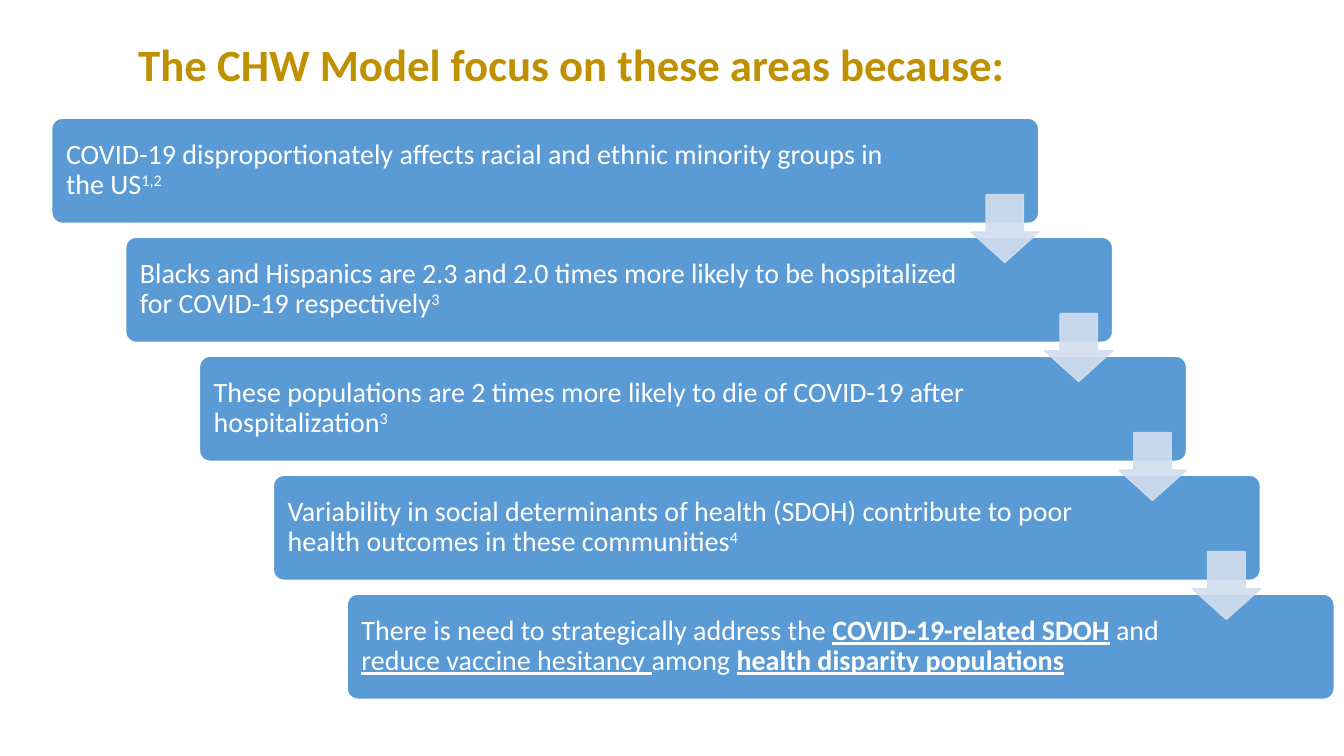
from dataclasses import dataclass

import pptx
import pptx.dml.color
import pptx.enum.shapes
import pptx.enum.text
import pptx.oxml.ns
import pptx.util
from lxml import etree

Pt = pptx.util.Pt
RGB = pptx.dml.color.RGBColor.from_string
SHAPE = pptx.enum.shapes.MSO_SHAPE
ANCHOR = pptx.enum.text.MSO_ANCHOR
LEFT = pptx.enum.text.PP_ALIGN.LEFT
qn = pptx.oxml.ns.qn


@dataclass(frozen=True)
class Theme:
    font: str = "Calibri"
    title: str = "BF9000"
    bar: str = "5B9BD5"
    arrow: str = "D2DEEF"
    white: str = "FFFFFF"
    title_size: float = 32
    body_size: float = 20


THEME = Theme()
TITLE = "The CHW Model focus on these areas because:"

# Each reason is a list of (text, style): "" plain, "b" bold, "u" underlined, "^" superscript
REASONS = [
    [("COVID-19 disproportionately affects racial and ethnic minority groups in the US", ""),
     ("1,2", "^")],
    [("Blacks and Hispanics are 2.3 and 2.0 times more likely to be hospitalized "
      "for COVID-19 respectively", ""), ("3", "^")],
    [("These populations are 2 times more likely to die of COVID-19 after hospitalization", ""),
     ("3", "^")],
    [("Variability in social determinants of health (SDOH) contribute to poor health "
      "outcomes in these communities", ""), ("4", "^")],
    [("There is need to strategically address the ", ""), ("COVID-19-related SDOH", "bu"),
     (" and ", ""), ("reduce vaccine hesitancy ", "u"), ("among ", ""),
     ("health disparity populations", "bu")],
]


def style_font(font, size, color):
    font.name = THEME.font
    font.size = Pt(size)
    font.color.rgb = RGB(color)


def add_block(s, kind, x, y, w, h, fill, line):
    sp = s.shapes.add_shape(kind, Pt(x), Pt(y), Pt(w), Pt(h))
    sp.shadow.inherit = False
    sp.fill.solid()
    sp.fill.fore_color.rgb = RGB(fill)
    sp.line.color.rgb = RGB(line)
    sp.line.width = Pt(1)
    return sp


def add_title(s, x, y, w, h):
    sp = s.shapes.title
    sp.left, sp.top, sp.width, sp.height = Pt(x), Pt(y), Pt(w), Pt(h)
    tf = sp.text_frame
    tf.text = TITLE
    tf.word_wrap = True
    tf.auto_size = pptx.enum.text.MSO_AUTO_SIZE.NONE
    tf.vertical_anchor = ANCHOR.TOP
    p = tf.paragraphs[0]
    p.alignment = LEFT
    font = p.runs[0].font
    style_font(font, THEME.title_size, THEME.title)
    font.bold = True


def add_bar(s, x, y, w, h, reason):
    sp = add_block(s, SHAPE.ROUNDED_RECTANGLE, x, y, w, h, THEME.bar, THEME.white)
    sp.adjustments[0] = 0.1
    tf = sp.text_frame
    tf.word_wrap = True
    tf.vertical_anchor = ANCHOR.MIDDLE
    tf.margin_left, tf.margin_right = Pt(8), Pt(108)
    p = tf.paragraphs[0]
    p.alignment = LEFT
    p.line_spacing = 0.9
    for text, style in reason:
        r = p.add_run()
        r.text = text
        style_font(r.font, THEME.body_size, THEME.white)
        r.font.bold = "b" in style
        r.font.underline = "u" in style
        if "^" in style:
            r.font._element.set("baseline", "30000")


def add_arrow(s, x, y, size):
    sp = add_block(s, SHAPE.DOWN_ARROW, x, y, size, size, THEME.arrow, THEME.arrow)
    sp.adjustments[0], sp.adjustments[1] = 0.55, 0.45
    # Fill and line at 90% opacity
    for color in sp._element.spPr.iter(qn("a:srgbClr")):
        etree.SubElement(color, qn("a:alpha")).set("val", "90000")


def add_staircase(s, x, y, w, h):
    bar_w, bar_h, arrow = 705, 75, 48.5
    steps = len(REASONS) - 1
    dx, dy = (w - bar_w) / steps, (h - bar_h) / steps
    for i, reason in enumerate(REASONS):
        add_bar(s, x + i * dx, y + i * dy, bar_w, bar_h, reason)
    # Arrows lead from each bar to the next
    for i in range(steps):
        add_arrow(s, x + bar_w - arrow + i * dx, y + 54.5 + i * dy, arrow)


def main():
    prs = pptx.Presentation()
    prs.slide_width, prs.slide_height = Pt(960), Pt(540)
    s = prs.slides.add_slide(prs.slide_layouts[5])
    add_title(s, 91.5, 22.5, 675, 46)
    add_staircase(s, 37, 84.5, 916, 415)
    prs.save("out.pptx")


if __name__ == "__main__":
    main()
